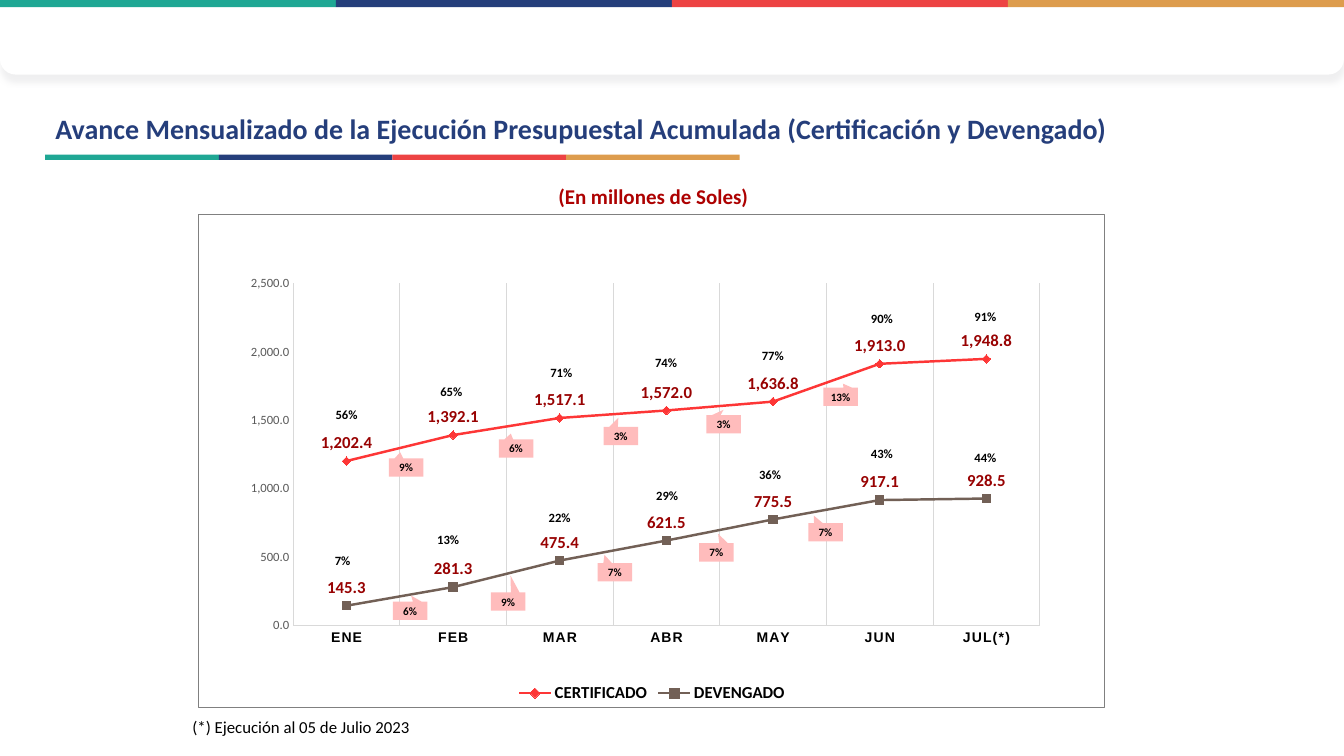
from lxml import etree
from pptx import Presentation
from pptx import util as u
from pptx.chart import data as chart_data
from pptx.dml.color import RGBColor
from pptx.enum import chart as ch, shapes, text
from pptx.oxml import parse_xml
from pptx.oxml.ns import nsdecls, qn

Cm, Pt = u.Cm, u.Pt
FONT = "Calibri"
BAND_COLORS = ["1FA794", "253E7B", "ED4343", "DD9C4D"]
MONTHS = ["ENE", "FEB", "MAR", "ABR", "MAY", "JUN", "JUL(*)"]
NUMBER_FORMAT = "##,##0.0,,"
MILLION = 1_000_000

# name, color, marker, values in millions
SERIES = [
    ("CERTIFICADO", "FD3636", ch.XL_MARKER_STYLE.DIAMOND,
     [1202.4, 1392.1, 1517.1, 1572.0, 1636.8, 1913.0, 1948.8]),
    ("DEVENGADO", "726056", ch.XL_MARKER_STYLE.SQUARE,
     [145.3, 281.3, 475.4, 621.5, 775.5, 917.1, 928.5]),
]

# text, left and top in cm from the chart corner
PROGRESS = [
    ("56%", 3.1, 4.75), ("65%", 5.74, 4.17), ("71%", 8.51, 3.68),
    ("74%", 11.15, 3.45), ("77%", 13.84, 3.25), ("90%", 16.59, 2.34),
    ("91%", 19.2, 2.29),
    ("7%", 3.0, 8.43), ("13%", 5.66, 7.9), ("22%", 8.47, 7.34),
    ("29%", 11.18, 6.78), ("36%", 13.77, 6.27), ("43%", 16.59, 5.74),
    ("44%", 19.2, 5.84),
]

# text, left and top in cm from the chart corner, pointer x and y
INCREASES = [
    ("9%", 4.8, 6.17, -0.17, -0.83), ("6%", 7.57, 5.69, -0.15, -0.81),
    ("3%", 10.21, 5.38, -0.07, -1.01), ("3%", 12.8, 5.08, 0, -0.79),
    ("13%", 15.75, 4.39, 0.07, -0.72),
    ("6%", 4.9, 9.78, 0.03, -0.83), ("9%", 7.37, 9.55, 0.07, -1.43),
    ("7%", 10.06, 8.81, -0.3, -0.95), ("7%", 12.62, 8.31, 0.05, -1.02),
    ("7%", 15.37, 7.8, -0.34, -0.91),
]


def rgb(value):
    return RGBColor.from_string(value)


def set_font(font, size, color, bold=False, name=FONT):
    font.size, font.bold, font.name = Pt(size), bold, name
    font.color.rgb = rgb(color)


def set_line(line, color, width=0.75):
    line.color.rgb = rgb(color)
    line.width = Pt(width)


def add_filled(slide, kind, left, top, width, height, color):
    shape = slide.shapes.add_shape(kind, Cm(left), Cm(top), Cm(width), Cm(height))
    shape.shadow.inherit = False
    shape.fill.solid()
    shape.fill.fore_color.rgb = rgb(color)
    shape.line.fill.background()
    return shape


def add_text(slide, words, left, top, width, height, size, color="000000",
             bold=True, align=text.PP_ALIGN.LEFT):
    box = slide.shapes.add_textbox(Cm(left), Cm(top), Cm(width), Cm(height))
    box.text_frame.word_wrap = True
    paragraph = box.text_frame.paragraphs[0]
    paragraph.text = words
    paragraph.alignment = align
    set_font(paragraph.font, size, color, bold)


def add_color_band(slide, left, top, width, height):
    part = width / len(BAND_COLORS)
    for index, color in enumerate(BAND_COLORS):
        add_filled(slide, shapes.MSO_SHAPE.RECTANGLE, left + index * part, top,
                   part, height, color)


def add_header(slide, width, height):
    panel = add_filled(slide, shapes.MSO_SHAPE.ROUND_2_SAME_RECTANGLE,
                       0, 0, width, height, "FFFFFF")
    panel.adjustments[0], panel.adjustments[1] = 0, 0.21
    effects = panel._element.spPr.find(qn("a:effectLst"))
    effects.append(parse_xml(
        f'<a:outerShdw {nsdecls("a")} blurRad="{Pt(4)}" dist="{Pt(5)}" dir="5400000">'
        '<a:srgbClr val="A5A5AA"><a:alpha val="17000"/></a:srgbClr></a:outerShdw>'))
    add_color_band(slide, 0, 0, width, 0.18)


def add_heading(slide, left, top, width, height):
    title = slide.shapes.title
    title.left, title.top = Cm(left), Cm(top)
    title.width, title.height = Cm(width), Cm(height)
    frame = title.text_frame
    frame.vertical_anchor = text.MSO_ANCHOR.MIDDLE
    paragraph = frame.paragraphs[0]
    paragraph.text = ("Avance Mensualizado de la Ejecución Presupuestal Acumulada "
                      "(Certificación y Devengado)")
    paragraph.alignment = text.PP_ALIGN.LEFT
    paragraph.line_spacing = 0.9
    set_font(paragraph.font, 20, "253E7B", True)
    add_color_band(slide, left, top + height + 0.04, 17.5, 0.13)


def style_frame(chart):
    """Give the chart its border and the plot its fixed place."""
    chart_element = chart._chartSpace.find(qn("c:chart"))
    chart_element.addnext(parse_xml(
        f'<c:spPr {nsdecls("c", "a")}>'
        '<a:solidFill><a:srgbClr val="FFFFFF"/></a:solidFill>'
        f'<a:ln w="{Pt(0.75)}"><a:solidFill><a:srgbClr val="808080"/></a:solidFill></a:ln>'
        '</c:spPr>'))
    plot_area = chart_element.find(qn("c:plotArea"))
    for old in plot_area.findall(qn("c:layout")):
        plot_area.remove(old)
    layout = parse_xml(f'<c:layout {nsdecls("c")}><c:manualLayout/></c:layout>')
    settings = [("layoutTarget", "inner"), ("xMode", "edge"), ("yMode", "edge"),
                ("x", 0.104), ("y", 0.141), ("w", 0.824), ("h", 0.694)]
    for tag, value in settings:
        etree.SubElement(layout[0], qn(f"c:{tag}")).set("val", str(value))
    plot_area.insert(0, layout)


def style_axes(chart):
    months, amounts = chart.category_axis, chart.value_axis
    for axis in (months, amounts):
        axis.major_tick_mark = axis.minor_tick_mark = ch.XL_TICK_MARK.NONE
        set_line(axis.format.line, "D9D9D9")
    months.has_major_gridlines = True
    set_line(months.major_gridlines.format.line, "D9D9D9")
    set_font(months.tick_labels.font, 10, "000000", True, "Arial")
    months._element.find(".//" + qn("a:defRPr")).set("spc", "100")
    amounts.has_major_gridlines = False
    amounts.minimum_scale, amounts.maximum_scale = 0, 2500 * MILLION
    amounts.major_unit = 500 * MILLION
    set_font(amounts.tick_labels.font, 9, "595959")
    amounts.tick_labels.number_format = NUMBER_FORMAT
    amounts.tick_labels.number_format_is_linked = False


def style_series(series, color, marker):
    series.smooth = False
    set_line(series.format.line, color, 1.75)
    series.marker.style, series.marker.size = marker, 6
    series.marker.format.fill.solid()
    series.marker.format.fill.fore_color.rgb = rgb(color)
    set_line(series.marker.format.line, color)
    labels = series.data_labels
    labels.show_value = True
    labels.position = ch.XL_LABEL_POSITION.ABOVE
    labels.number_format, labels.number_format_is_linked = NUMBER_FORMAT, False
    set_font(labels.font, 12, "980202", True)


def add_budget_chart(slide, left, top, width, height):
    data = chart_data.CategoryChartData(number_format=NUMBER_FORMAT)
    data.categories = MONTHS
    for name, _, _, values in SERIES:
        data.add_series(name, [round(value * MILLION) for value in values])
    chart = slide.shapes.add_chart(ch.XL_CHART_TYPE.LINE_MARKERS, Cm(left), Cm(top),
                                   Cm(width), Cm(height), data).chart
    chart.has_title = False
    set_font(chart.font, 10, "000000")
    chart.has_legend = True
    chart.legend.position = ch.XL_LEGEND_POSITION.BOTTOM
    chart.legend.include_in_layout = False
    set_font(chart.legend.font, 12, "000000", True)
    chart.plots[0].vary_by_categories = False
    style_frame(chart)
    style_axes(chart)
    for series, (_, color, marker, _) in zip(chart.plots[0].series, SERIES):
        style_series(series, color, marker)


def add_increase(slide, words, left, top, pointer_x, pointer_y):
    callout = add_filled(slide, shapes.MSO_SHAPE.RECTANGULAR_CALLOUT,
                         left, top, 0.87, 0.46, "FFBCBC")
    callout.adjustments[0], callout.adjustments[1] = pointer_x, pointer_y
    frame = callout.text_frame
    frame.margin_left = frame.margin_right = frame.margin_top = frame.margin_bottom = 0
    frame.vertical_anchor = text.MSO_ANCHOR.MIDDLE
    paragraph = frame.paragraphs[0]
    paragraph.text = words
    paragraph.alignment = text.PP_ALIGN.CENTER
    set_font(paragraph.font, 8, "000000", True)


def add_chart_region(slide, left, top, width, height):
    add_budget_chart(slide, left, top, width, height)
    for words, x, y, pointer_x, pointer_y in INCREASES:
        add_increase(slide, words, left + x, top + y, pointer_x, pointer_y)
    for words, x, y in PROGRESS:
        add_text(slide, words, left + x, top + y, 1.27, 0.64, 9,
                 align=text.PP_ALIGN.CENTER)
    add_text(slide, "(En millones de Soles)", left + 8.82, top - 0.89, 5.77, 0.89,
             15, "AD0101")
    add_text(slide, "(*) Ejecución al 05 de Julio 2023", left - 0.4,
             top + height + 0.1, 10.64, 0.76, 12, bold=False)


def main():
    presentation = Presentation()
    presentation.slide_width, presentation.slide_height = Cm(33.87), Cm(19.05)
    slide = presentation.slides.add_slide(presentation.slide_layouts[5])
    add_header(slide, 33.87, 1.88)
    add_heading(slide, 1.14, 2.72, 31.78, 1.14)
    add_chart_region(slide, 5, 5.38, 22.86, 12.45)
    presentation.save("out.pptx")


if __name__ == "__main__":
    main()
